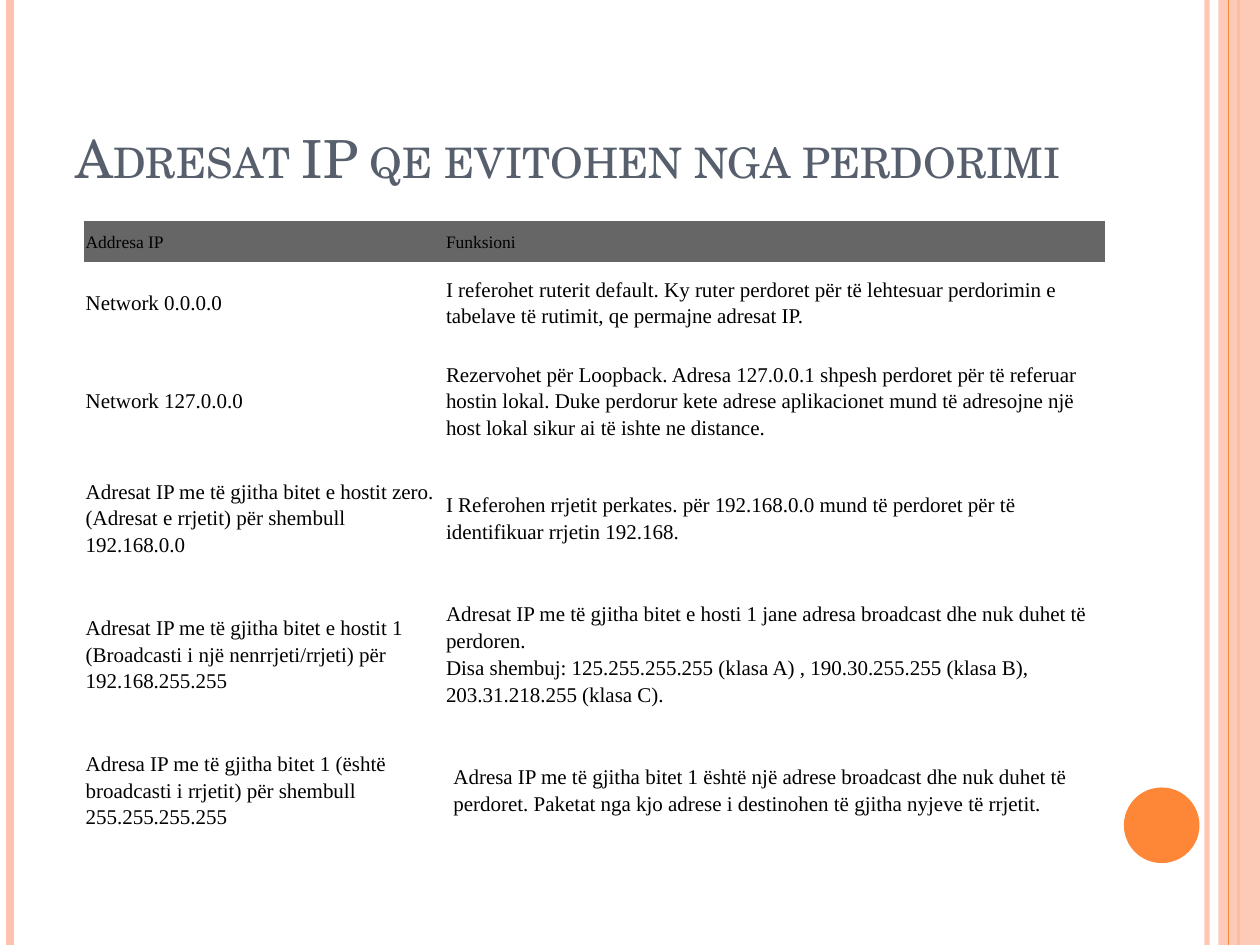
from lxml.etree import SubElement
from pptx import Presentation
from pptx.dml.color import RGBColor
from pptx.enum.shapes import MSO_CONNECTOR as Connector, MSO_SHAPE as Shape
from pptx.enum.text import MSO_ANCHOR as Anchor
from pptx.oxml.ns import qn
from pptx.util import Inches, Pt

# Content
TITLE = "Adresat IP qe evitohen nga perdorimi"
HEADER = ("Addresa IP", ["Funksioni"])
ADDRESSES = [
    ("Network 0.0.0.0",
     ["I referohet ruterit default. Ky ruter perdoret për të lehtesuar perdorimin e "
      "tabelave të rutimit, qe permajne adresat IP."]),
    ("Network 127.0.0.0",
     ["Rezervohet për Loopback. Adresa 127.0.0.1 shpesh perdoret për të referuar hostin "
      "lokal. Duke perdorur kete adrese aplikacionet mund të adresojne një host lokal "
      "sikur ai të ishte ne distance."]),
    ("Adresat IP me të gjitha bitet e hostit zero. (Adresat e rrjetit) për shembull "
     "192.168.0.0",
     ["I Referohen rrjetit perkates. për 192.168.0.0 mund të perdoret për të "
      "identifikuar rrjetin 192.168."]),
    ("Adresat IP me të gjitha bitet e hostit 1 (Broadcasti i një nenrrjeti/rrjeti) për "
     "192.168.255.255",
     ["Adresat IP me të gjitha bitet e hosti 1 jane adresa broadcast dhe nuk duhet të "
      "perdoren.",
      "Disa shembuj: 125.255.255.255 (klasa A) , 190.30.255.255 (klasa B), "
      "203.31.218.255 (klasa C)."]),
    ("Adresa IP me të gjitha bitet 1 (është broadcasti i rrjetit) për shembull "
     "255.255.255.255",
     ["Adresa IP me të gjitha bitet 1 është një adrese broadcast dhe nuk duhet të "
      "perdoret. Paketat nga kjo adrese i destinohen të gjitha nyjeve të rrjetit."]),
]

# Theme and measures
THEME = {
    "peach": "FEC3AE", "orange": "FE8637", "slate": "575F6D",
    "header": "666666", "text": "000000",
    "title_font": "TeX Gyre Schola", "body_font": "Times New Roman",
    "title_size": 30, "header_size": 10, "body_size": 12, "line_spacing": 1.15,
}
WIDTH, HEIGHT = 10, 7.5
COLUMNS = [2.86, 0.05, 5.18]
ROWS = [0.33, 0.63, 0.93, 0.93, 1.23, 0.93]
CELL_MARGIN = 0.01
NO_TABLE_STYLE = "{2D5ABB26-0587-4C30-8999-92F81FD0307C}"
# Vertical rules: x, colour, width, opacity in percent
RULES_BELOW = [(9.58, "peach", 3, 93), (0.08, "peach", 4.5, 100), (9.83, "orange", 1.5, 100)]
RULE_ABOVE = (9.75, "orange", 0.75, 100)


def color(name):
    return RGBColor.from_string(THEME[name])


def set_opacity(element, percent):
    if percent < 100:
        rgb = next(element.iter(qn("a:srgbClr")))
        SubElement(rgb, qn("a:alpha"), val=str(percent * 1000))


def add_rule(slide, x, color_name, width, opacity):
    rule = slide.shapes.add_connector(
        Connector.STRAIGHT, Inches(x), 0, Inches(x), Inches(HEIGHT))
    rule.line.color.rgb = color(color_name)
    rule.line.width = Pt(width)
    properties = rule.line._get_or_add_ln().getparent()
    set_opacity(properties, opacity)
    SubElement(properties, qn("a:effectLst"))


def add_solid(slide, kind, box, color_name, opacity=100):
    shape = slide.shapes.add_shape(kind, *map(Inches, box))
    shape.shadow.inherit = False
    shape.fill.solid()
    shape.fill.fore_color.rgb = color(color_name)
    shape.line.fill.background()
    set_opacity(shape.fill._xPr, opacity)


def add_run(paragraph, text, font, size, color_name):
    run = paragraph.add_run()
    run.text = text
    run.font.name = THEME[font]
    run.font.size = Pt(THEME[size])
    run.font.color.rgb = color(color_name)
    return run


def add_title(slide):
    box = slide.shapes.add_textbox(*map(Inches, (0.5, 0.3, 8.17, 1.25)))
    frame = box.text_frame
    frame.word_wrap = True
    frame.vertical_anchor = Anchor.BOTTOM
    run = add_run(frame.paragraphs[0], TITLE, "title_font", "title_size", "slate")
    run.font._element.set("cap", "small")


def fill_cell(cell, texts, size, is_header):
    cell.vertical_anchor = Anchor.MIDDLE
    cell.margin_left = cell.margin_right = Inches(CELL_MARGIN)
    cell.margin_top = cell.margin_bottom = Inches(CELL_MARGIN)
    if is_header:
        cell.fill.solid()
        cell.fill.fore_color.rgb = color("header")
    else:
        cell.fill.background()
    frame = cell.text_frame
    for index, text in enumerate(texts):
        paragraph = frame.add_paragraph() if index else frame.paragraphs[0]
        paragraph.line_spacing = THEME["line_spacing"]
        add_run(paragraph, text, "body_font", size, "text")


def add_address_table(slide):
    frame = slide.shapes.add_table(
        len(ROWS), len(COLUMNS), Inches(0.67), Inches(1.75),
        Inches(sum(COLUMNS)), Inches(sum(ROWS)))
    table = frame.table
    table.first_row = table.horz_banding = False
    next(table._tbl.iter(qn("a:tableStyleId"))).text = NO_TABLE_STYLE
    for column, width in zip(table.columns, COLUMNS):
        column.width = Inches(width)
    for row, height in zip(table.rows, ROWS):
        row.height = Inches(height)

    last = len(ROWS) - 1
    for index, (address, purpose) in enumerate([HEADER] + ADDRESSES):
        # The narrow middle column joins the left cell in the last row only
        merge_from, purpose_column = (0, 2) if index == last else (1, 1)
        table.cell(index, merge_from).merge(table.cell(index, merge_from + 1))
        size = "body_size" if index else "header_size"
        fill_cell(table.cell(index, 0), [address], size, index == 0)
        fill_cell(table.cell(index, purpose_column), purpose, size, index == 0)


def main():
    presentation = Presentation()
    presentation.slide_width, presentation.slide_height = Inches(WIDTH), Inches(HEIGHT)
    slide = presentation.slides.add_slide(presentation.slide_layouts[6])

    # Side decoration, from back to front
    for rule in RULES_BELOW:
        add_rule(slide, *rule)
    add_solid(slide, Shape.RECTANGLE, (9.67, 0, WIDTH - 9.67, HEIGHT), "peach", 87)
    add_rule(slide, *RULE_ABOVE)
    add_solid(slide, Shape.OVAL, (8.92, 6.25, 0.6, 0.6), "orange")

    # Title and table
    add_title(slide)
    add_address_table(slide)
    presentation.save("out.pptx")


if __name__ == "__main__":
    main()
